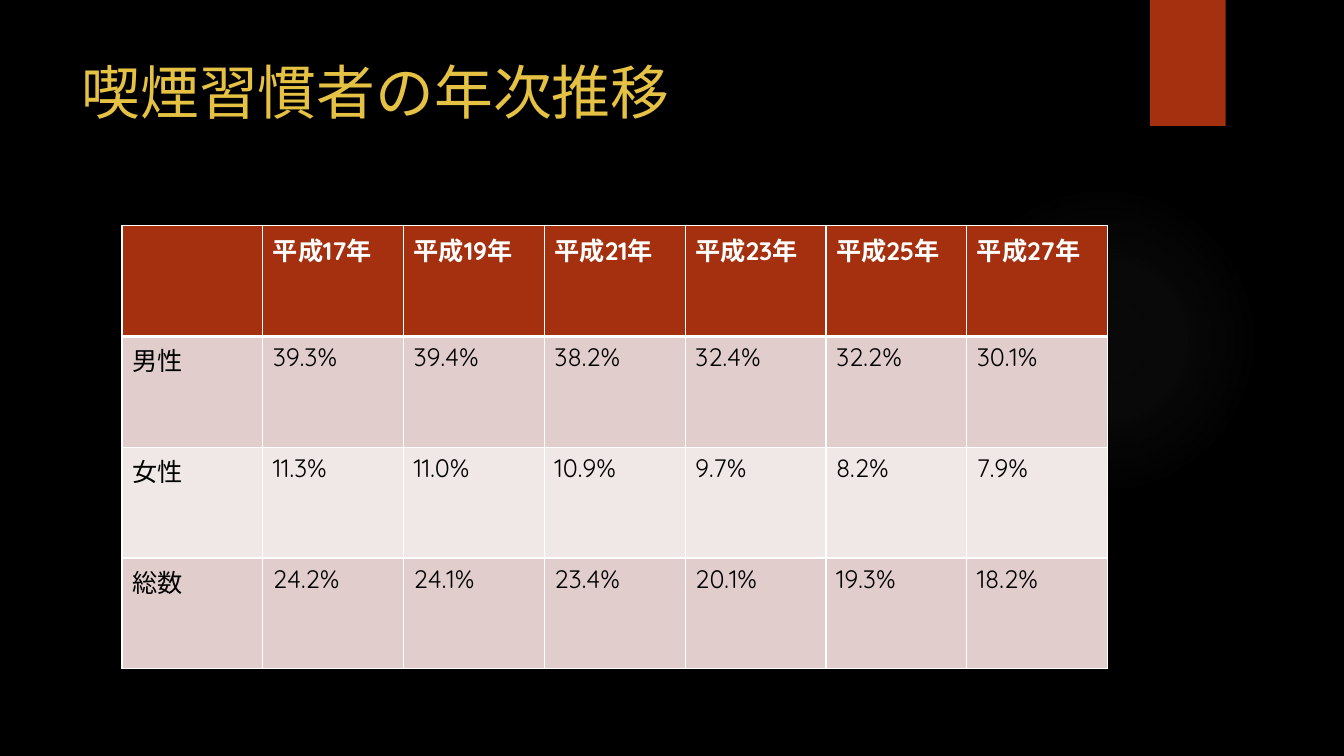
from lxml import etree
from pptx import Presentation
from pptx.dml.color import RGBColor
from pptx.enum.lang import MSO_LANGUAGE_ID
from pptx.enum.shapes import MSO_SHAPE
from pptx.enum.text import MSO_ANCHOR
from pptx.oxml import parse_xml
from pptx.oxml.ns import nsdecls, qn
from pptx.util import Pt

RECTANGLE, ELLIPSE = MSO_SHAPE.RECTANGLE, MSO_SHAPE.OVAL
TOP = MSO_ANCHOR.TOP
JAPANESE = MSO_LANGUAGE_ID.JAPANESE

BLACK = RGBColor(0x00, 0x00, 0x00)
WHITE = RGBColor(0xFF, 0xFF, 0xFF)
GOLD = RGBColor(0xE5, 0xC2, 0x43)
RUST = RGBColor(0xA5, 0x30, 0x0F)
GLOW_GRAY = RGBColor(0x84, 0x84, 0x84)
ROW_DARK = RGBColor(0xE1, 0xCD, 0xCC)
ROW_LIGHT = RGBColor(0xF0, 0xE8, 0xE7)

FONT = "Quicksand"
COLUMN_WIDTH, ROW_HEIGHT = 100.6, 79.1
THIN, THICK = 1, 3
GLOW_STOPS = [(0, 7), (36, 6), (69, 0)]  # position and opacity in percent

RATES = [
    ["", "平成17年", "平成19年", "平成21年", "平成23年", "平成25年", "平成27年"],
    ["男性", "39.3%", "39.4%", "38.2%", "32.4%", "32.2%", "30.1%"],
    ["女性", "11.3%", "11.0%", "10.9%", "9.7%", "8.2%", "7.9%"],
    ["総数", "24.2%", "24.1%", "23.4%", "20.1%", "19.3%", "18.2%"],
]


def write_text(frame, text, *, size, color, bold=False):
    para = frame.paragraphs[0]
    para.font.size = Pt(size)
    if not text:
        return
    span = para.add_run()
    span.text = text
    font = span.font
    font.name, font.size, font.bold = FONT, Pt(size), bold
    font.color.rgb = color
    font.language_id = JAPANESE


def add_plain_shape(page, kind, left, top, width, height, color):
    shape = page.shapes.add_shape(kind, Pt(left), Pt(top), Pt(width), Pt(height))
    shape.shadow.inherit = False
    shape.fill.solid()
    shape.fill.fore_color.rgb = color
    shape.line.fill.background()
    return shape


def add_glow(page, left, top, diameter):
    glow = add_plain_shape(page, ELLIPSE, left, top, diameter, diameter, GLOW_GRAY)
    stops = "".join(
        f'<a:gs pos="{position * 1000}"><a:srgbClr val="{GLOW_GRAY}">'
        f'<a:alpha val="{opacity * 1000}"/></a:srgbClr></a:gs>'
        for position, opacity in GLOW_STOPS
    )
    gradient = parse_xml(
        f'<a:gradFill {nsdecls("a")} rotWithShape="1"><a:gsLst>{stops}</a:gsLst>'
        '<a:path path="circle">'
        '<a:fillToRect l="50000" t="50000" r="50000" b="50000"/></a:path></a:gradFill>'
    )
    properties = glow.element.spPr
    properties.replace(properties.find(qn("a:solidFill")), gradient)


def add_title(page, text):
    box = page.shapes.add_textbox(Pt(51.1), Pt(36), Pt(740.9), Pt(110.2))
    frame = box.text_frame
    frame.word_wrap = True
    frame.vertical_anchor = TOP
    write_text(frame, text, size=42, color=GOLD)


def set_borders(cell, **widths):
    properties = cell._tc.get_or_add_tcPr()
    # Border lines come before the fill
    for index, (side, width) in enumerate(widths.items()):
        line = etree.Element(qn(f"a:ln{side}"), w=str(Pt(width)))
        fill = etree.SubElement(line, qn("a:solidFill"))
        etree.SubElement(fill, qn("a:srgbClr"), val=str(WHITE))
        properties.insert(index, line)


def add_rate_table(page, left, top):
    row_count, column_count = len(RATES), len(RATES[0])
    table = page.shapes.add_table(
        row_count, column_count, Pt(left), Pt(top),
        Pt(COLUMN_WIDTH * column_count), Pt(ROW_HEIGHT * row_count),
    ).table
    for column in table.columns:
        column.width = Pt(COLUMN_WIDTH)
    for row in table.rows:
        row.height = Pt(ROW_HEIGHT)

    for row_index, values in enumerate(RATES):
        header = row_index == 0
        band = RUST if header else ROW_DARK if row_index % 2 else ROW_LIGHT
        for column_index, value in enumerate(values):
            cell = table.cell(row_index, column_index)
            cell.fill.solid()
            cell.fill.fore_color.rgb = band
            write_text(cell.text_frame, value, size=18,
                       color=WHITE if header else BLACK, bold=header)
            set_borders(cell, L=THIN, R=THIN,
                        T=THICK if row_index == 1 else THIN,
                        B=THICK if header else THIN)


def main():
    deck = Presentation()
    deck.slide_width, deck.slide_height = Pt(960), Pt(540)
    page = deck.slides.add_slide(deck.slide_layouts[6])
    page.background.fill.solid()
    page.background.fill.fore_color.rgb = BLACK

    # Backdrop: soft glow and corner tab
    add_glow(page, 677.5, 131.8, 221.8)
    add_plain_shape(page, RECTANGLE, 821.5, 0, 54, 90, RUST)

    # Title and smoking rates
    add_title(page, "喫煙習慣者の年次推移")
    add_rate_table(page, 87.1, 161.3)

    deck.save("out.pptx")


if __name__ == "__main__":
    main()
